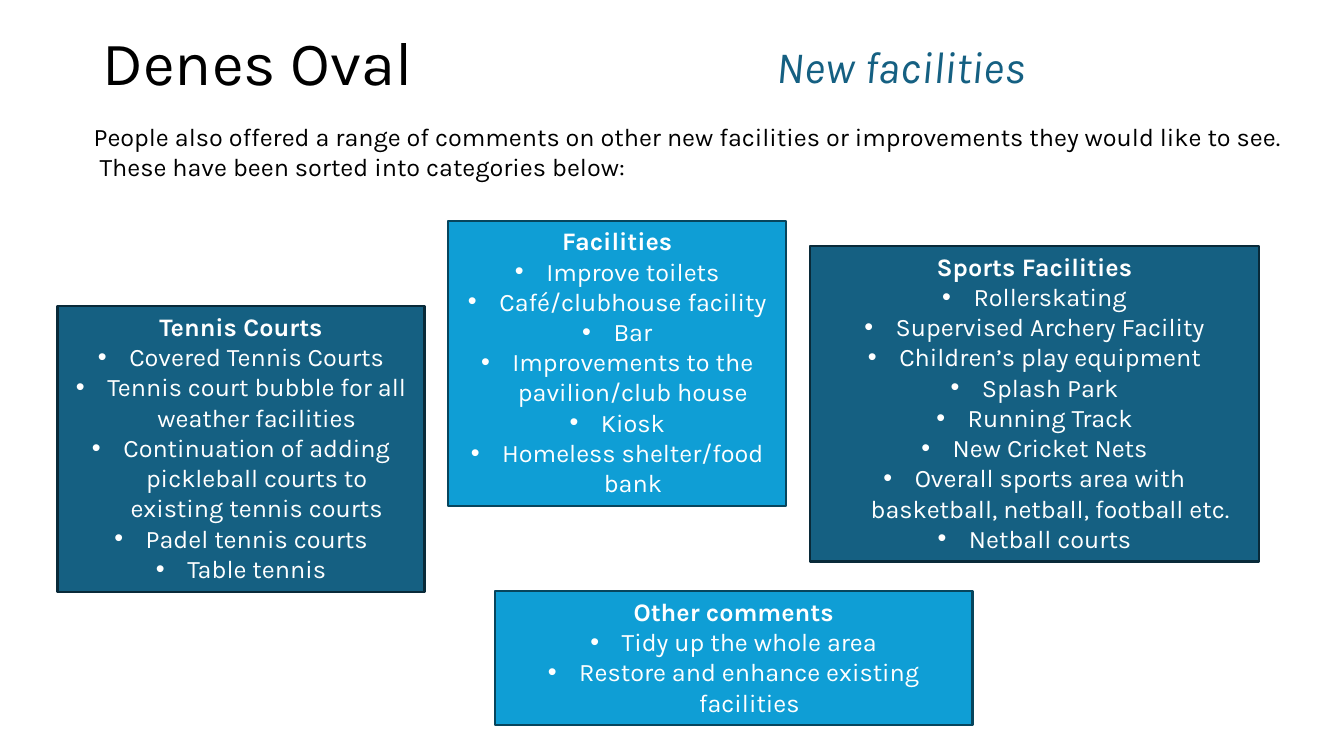
from lxml.etree import SubElement
from pptx import Presentation
from pptx.dml.color import RGBColor
from pptx.enum.shapes import MSO_SHAPE
from pptx.enum.text import MSO_ANCHOR, PP_ALIGN
from pptx.oxml.ns import qn
from pptx.util import Cm, Pt

FONT = "Karla"
COLORS = {
    "text": "000000", "white": "FFFFFF",
    "navy": "156082", "navy_edge": "092A39",
    "sky": "0F9ED5", "sky_edge": "07455D",
}

# Headings: text, (left, top, width, height) in cm, size, colour, italic, anchor, line spacing
HEADINGS = [
    ("Denes Oval", (2.34, -0.18, 29.21, 3.68), 44, "text", False, MSO_ANCHOR.MIDDLE, 0.9),
    ("New facilities", (19.33, 0.86, 13.92, 1.63), 32, "navy", True, MSO_ANCHOR.TOP, 1.0),
    ("People also offered a range of comments on other new facilities or improvements "
     "they would like to see.  These have been sorted into categories below:",
     (2.11, 2.92, 30.58, 1.8), 18, "text", False, MSO_ANCHOR.TOP, 1.0),
]

# Categories: title, (left, top, width, height) in cm, colour, comments
CATEGORIES = [
    ("Tennis Courts", (1.45, 7.72, 9.25, 7.19), "navy", [
        "Covered Tennis Courts",
        "Tennis court bubble for all weather facilities",
        "Continuation of adding pickleball courts to existing tennis courts",
        "Padel tennis courts",
        "Table tennis",
    ]),
    ("Facilities", (11.3, 5.56, 8.51, 7.19), "sky", [
        "Improve toilets",
        "Café/clubhouse facility",
        "Bar",
        "Improvements to the pavilion/club house",
        "Kiosk",
        "Homeless shelter/food bank",
    ]),
    ("Sports Facilities", (20.42, 6.2, 11.3, 7.95), "navy", [
        "Rollerskating",
        "Supervised Archery Facility",
        "Children’s play equipment",
        "Splash Park",
        "Running Track",
        "New Cricket Nets",
        "Overall sports area with basketball, netball, football etc.",
        "Netball courts",
    ]),
    ("Other comments", (12.47, 14.9, 12.04, 3.36), "sky", [
        "Tidy up the whole area",
        "Restore and enhance existing facilities",
    ]),
]


def color(name):
    return RGBColor.from_string(COLORS[name])


def write(paragraph, text, size, color_name, bold=False, italic=False):
    paragraph.text = text
    font = paragraph.font
    font.name, font.size, font.bold, font.italic = FONT, Pt(size), bold, italic
    font.color.rgb = color(color_name)


def add_bullet(paragraph, indent=Cm(0.79)):
    properties = paragraph._p.get_or_add_pPr()
    properties.set("marL", str(indent))
    properties.set("indent", str(-indent))
    # Bullet elements must come before the default run properties
    defaults = properties.find(qn("a:defRPr"))
    bullet_font = SubElement(properties, qn("a:buFont"), typeface="Arial")
    bullet = SubElement(properties, qn("a:buChar"), char="•")
    if defaults is not None:
        defaults.addprevious(bullet_font)
        defaults.addprevious(bullet)


def add_heading(slide, text, place, size, color_name, italic, anchor, spacing):
    frame = slide.shapes.add_textbox(*map(Cm, place)).text_frame
    frame.word_wrap = True
    frame.vertical_anchor = anchor
    write(frame.paragraphs[0], text, size, color_name, italic=italic)
    frame.paragraphs[0].line_spacing = spacing


def add_category(slide, title, place, color_name, comments):
    box = slide.shapes.add_shape(MSO_SHAPE.RECTANGLE, *map(Cm, place))
    box.shadow.inherit = False
    box.fill.solid()
    box.fill.fore_color.rgb = color(color_name)
    box.line.color.rgb = color(color_name + "_edge")
    box.line.width = Pt(1.5)
    frame = box.text_frame
    frame.word_wrap = True
    frame.vertical_anchor = MSO_ANCHOR.TOP
    write(frame.paragraphs[0], title, 18, "white", bold=True)
    for comment in comments:
        paragraph = frame.add_paragraph()
        write(paragraph, comment, 18, "white")
        add_bullet(paragraph)
    for paragraph in frame.paragraphs:
        paragraph.alignment = PP_ALIGN.CENTER


def main():
    presentation = Presentation()
    presentation.slide_width, presentation.slide_height = Cm(33.87), Cm(19.05)
    slide = presentation.slides.add_slide(presentation.slide_layouts[6])
    for heading in HEADINGS:
        add_heading(slide, *heading)
    for category in CATEGORIES:
        add_category(slide, *category)
    presentation.save("out.pptx")


if __name__ == "__main__":
    main()
